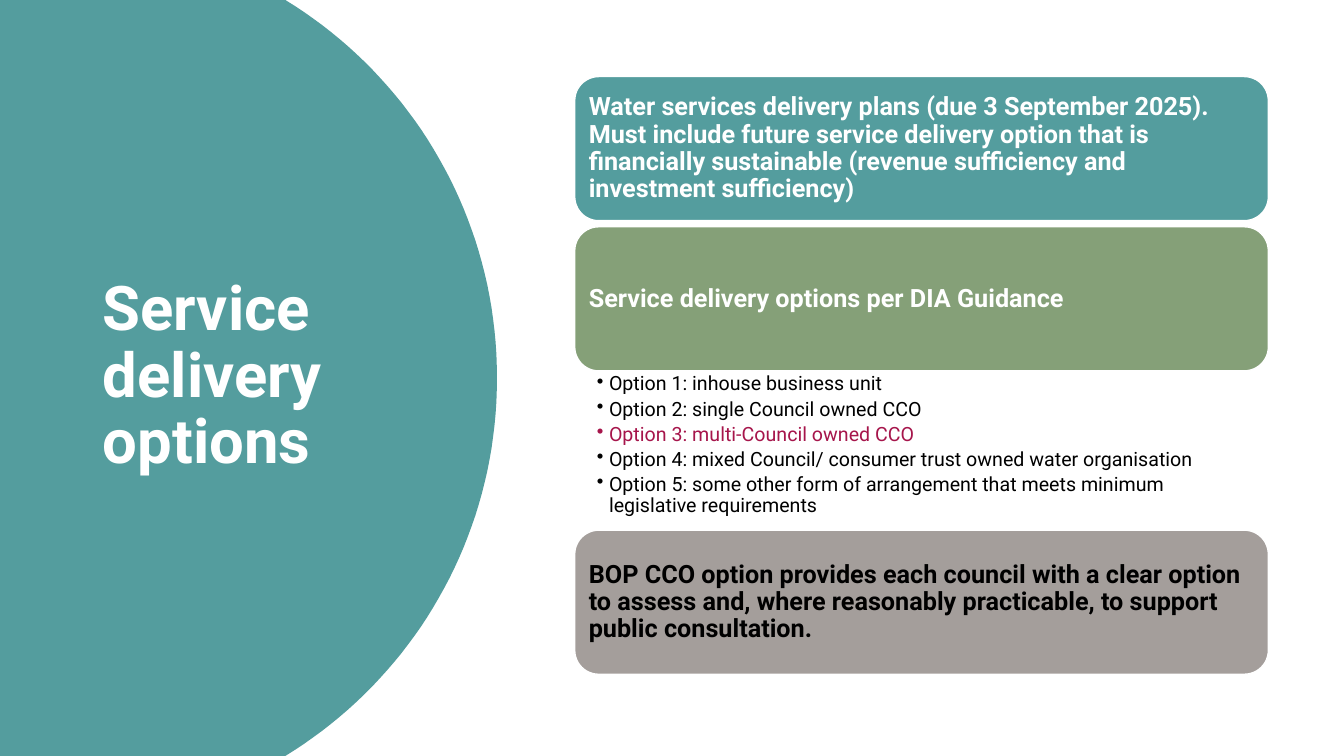
"""Build the service delivery options slide."""
from lxml import etree
from pptx import Presentation
from pptx.dml.color import RGBColor
from pptx.enum import shapes, text
from pptx.oxml.ns import qn
from pptx.util import Inches, Pt

TEAL = RGBColor(0x54, 0x9D, 0x9E)
GREEN = RGBColor(0x85, 0xA0, 0x78)
GREY = RGBColor(0xA4, 0x9E, 0x9B)
RED = RGBColor(0xA6, 0x15, 0x4B)
WHITE = RGBColor(0xFF, 0xFF, 0xFF)
BLACK = RGBColor(0, 0, 0)


def write(para, words, size=18, color=WHITE, bold=True, after=0, bullet=None):
    para.alignment = text.PP_ALIGN.LEFT
    para.line_spacing = 0.9
    para.space_after = Pt(after)
    run = para.add_run()
    run.text = words
    font = run.font
    font.name, font.size, font.bold = "Roboto", Pt(size), bold
    font.color.rgb = color
    if bullet:
        props = para._p.get_or_add_pPr()
        props.set("marL", str(Inches(0.12)))
        props.set("indent", str(Inches(-0.12)))
        etree.SubElement(props, qn("a:buChar")).set("char", bullet)


def inset(frame, left, top, right, bottom):
    frame.word_wrap = True
    frame.margin_left, frame.margin_top = Inches(left), Inches(top)
    frame.margin_right, frame.margin_bottom = Inches(right), Inches(bottom)


deck = Presentation()
deck.slide_width, deck.slide_height = Inches(13.33), Inches(7.5)
slide = deck.slides.add_slide(deck.slide_layouts[5])

title = slide.shapes.title
title.left, title.top = Inches(0.92), Inches(0.7)
title.width, title.height = Inches(3.23), Inches(6.09)
frame = title.text_frame
inset(frame, 0.1, 0.05, 0.1, 0.05)
frame.auto_size = text.MSO_AUTO_SIZE.NONE
frame.vertical_anchor = text.MSO_ANCHOR.MIDDLE
write(frame.paragraphs[0], "Service delivery options", size=44)

steps = 40
curve = []
for step in range(steps + 1):
    t = step / steps
    s = 1 - t
    x = 2.83 * s**3 + 3 * 4.09 * s * s * t + 3 * 4.93 * s * t * t + 4.93 * t**3
    y = 3 * 0.77 * s * s * t + 3 * 2.16 * s * t * t + 3.75 * t**3
    curve.append((x, y))
lower = [(x, 7.5 - y) for x, y in reversed(curve[:-1])]
pen = slide.shapes.build_freeform(0, 0, scale=Inches(1) / 1000)
pen.add_line_segments([(x * 1000, y * 1000) for x, y in curve + lower + [(0, 7.5)]])
disc = pen.convert_to_shape()
disc.shadow.inherit = False
disc.fill.solid()
disc.fill.fore_color.rgb = TEAL
disc.line.fill.background()
title._element.addprevious(disc._element)

cards = [
    (0.76, TEAL, WHITE, "Water services delivery plans (due 3 September 2025).  Must include "
     "future service delivery option that is financially sustainable "
     "(revenue sufficiency and investment sufficiency)"),
    (2.25, GREEN, WHITE, "Service delivery options per DIA Guidance"),
    (5.26, GREY, BLACK, "BOP CCO option provides each council with a clear option to assess "
     "and, where reasonably practicable, to support public consultation."),
]
for top, fill, color, words in cards:
    card = slide.shapes.add_shape(shapes.MSO_SHAPE.ROUNDED_RECTANGLE,
                                  Inches(5.7), Inches(top), Inches(6.88), Inches(1.43))
    card.shadow.inherit = False
    card.fill.solid()
    card.fill.fore_color.rgb = fill
    card.line.color.rgb = WHITE
    card.line.width = Pt(1)
    frame = card.text_frame
    inset(frame, 0.07, 0.07, 0.07, 0.07)
    frame.vertical_anchor = text.MSO_ANCHOR.MIDDLE
    write(frame.paragraphs[0], words, color=color, after=6.3)

options = [
    ("Option 1: inhouse business unit", BLACK),
    ("Option 2: single Council owned CCO", BLACK),
    ("Option 3: multi-Council owned CCO", RED),
    ("Option 4: mixed Council/ consumer trust owned water organisation", BLACK),
    ("Option 5: some other form of arrangement that meets minimum "
     "legislative requirements", BLACK),
]
box = slide.shapes.add_textbox(Inches(5.7), Inches(3.68), Inches(6.88), Inches(1.59))
frame = box.text_frame
inset(frame, 0.22, 0.03, 0.14, 0.03)
for i, (words, color) in enumerate(options):
    para = frame.add_paragraph() if i else frame.paragraphs[0]
    write(para, words, size=14, color=color, bold=False, after=2.8, bullet="•")

deck.save("out.pptx")
